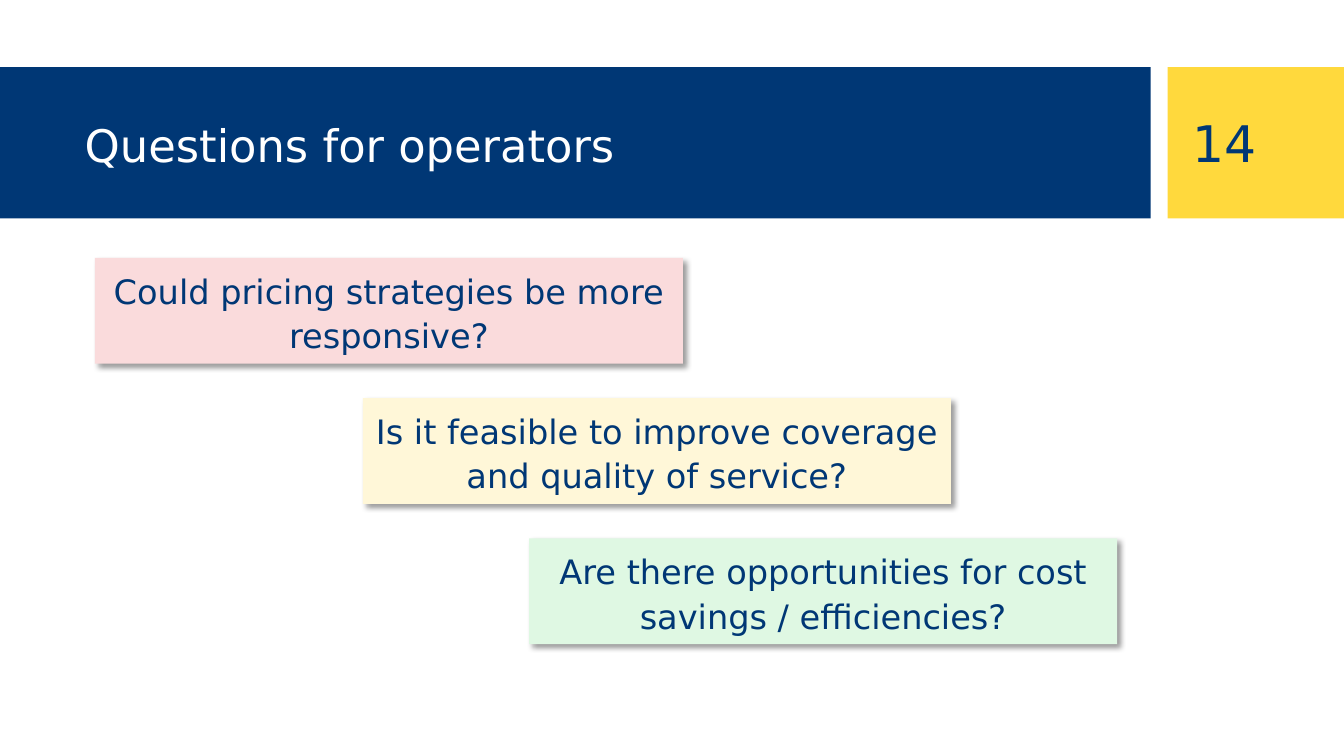
from lxml.etree import fromstring
from pptx import Presentation
from pptx.dml.color import RGBColor
from pptx.enum.shapes import MSO_SHAPE
from pptx.enum.text import MSO_ANCHOR, MSO_AUTO_SIZE, PP_ALIGN
from pptx.oxml.ns import nsdecls
from pptx.util import Inches, Pt

NAVY = RGBColor(0x00, 0x37, 0x75)
YELLOW = RGBColor(0xFF, 0xD9, 0x3D)
WHITE = RGBColor(0xFF, 0xFF, 0xFF)
PINK = RGBColor(0xFA, 0xDB, 0xDC)
CREAM = RGBColor(0xFF, 0xF7, 0xD8)
MINT = RGBColor(0xDF, 0xF8, 0xE3)

COLUMNS, ROWS = 160, 90
CELL = Inches(1) / 12

SOFT_SHADOW = f"""<a:effectLst {nsdecls('a')}>
  <a:outerShdw blurRad="{Pt(4)}" dist="{Pt(3)}" dir="2700000" algn="tl" rotWithShape="0">
    <a:srgbClr val="000000"><a:alpha val="40000"/></a:srgbClr>
  </a:outerShdw>
</a:effectLst>"""

deck = Presentation()
deck.slide_width = round(COLUMNS * CELL)
deck.slide_height = round(ROWS * CELL)
slide = deck.slides.add_slide(deck.slide_layouts[6])


def add_panel(grid_box, fill):
    """Draw a borderless rectangle; grid_box is column, row, width, height in cells."""
    panel = slide.shapes.add_shape(
        MSO_SHAPE.RECTANGLE, *(round(cells * CELL) for cells in grid_box))
    panel.shadow.inherit = False
    panel.fill.solid()
    panel.fill.fore_color.rgb = fill
    panel.line.fill.background()
    return panel


def write(frame, wording, size, colour, align=PP_ALIGN.LEFT, spacing=1.1):
    frame.word_wrap = True
    frame.vertical_anchor = MSO_ANCHOR.MIDDLE
    paragraph = frame.paragraphs[0]
    paragraph.text = wording
    paragraph.alignment = align
    paragraph.line_spacing = spacing
    for attribute, value in {"name": "DejaVu Sans", "size": Pt(size)}.items():
        setattr(paragraph.runs[0].font, attribute, value)
    paragraph.runs[0].font.color.rgb = colour


# Header band and page number
add_panel((0, 8, 137, 18), NAVY)
add_panel((139, 8, 21, 18), YELLOW)

for grid_box, wording, size, colour, spacing in (
    ((8.9, 9.8, 126, 14.2), "Questions for operators", 32, WHITE, 1.1),
    ((140.8, 9.8, 15.1, 14.2), "14", 36, NAVY, 1.0),
):
    heading = slide.shapes.add_textbox(*(round(cells * CELL) for cells in grid_box))
    write(heading.text_frame, wording, size, colour, spacing=spacing)

# Questions step down to the right
FIRST_ROW, ROW_STEP = 30.7, 16.7
QUESTION_WIDTH, QUESTION_HEIGHT = 70, 12.6
QUESTION_FORMAT = {
    "margin_left": Inches(0.1),
    "margin_right": Inches(0.1),
    "margin_top": Inches(0.1),
    "margin_bottom": Inches(0.1),
    "auto_size": MSO_AUTO_SIZE.SHAPE_TO_FIT_TEXT,
}
questions = (
    (11.3, PINK, "Could pricing strategies be more responsive?"),
    (43.2, CREAM, "Is it feasible to improve coverage and quality of service?"),
    (63, MINT, "Are there opportunities for cost savings / efficiencies?"),
)
for step, (column, fill, wording) in enumerate(questions):
    question = add_panel(
        (column, FIRST_ROW + step * ROW_STEP, QUESTION_WIDTH, QUESTION_HEIGHT), fill)
    properties = question.element.spPr
    properties.replace(properties.find("{*}effectLst"), fromstring(SOFT_SHADOW))
    for attribute, value in QUESTION_FORMAT.items():
        setattr(question.text_frame, attribute, value)
    write(question.text_frame, wording, 24, NAVY, PP_ALIGN.CENTER)

deck.save("out.pptx")
